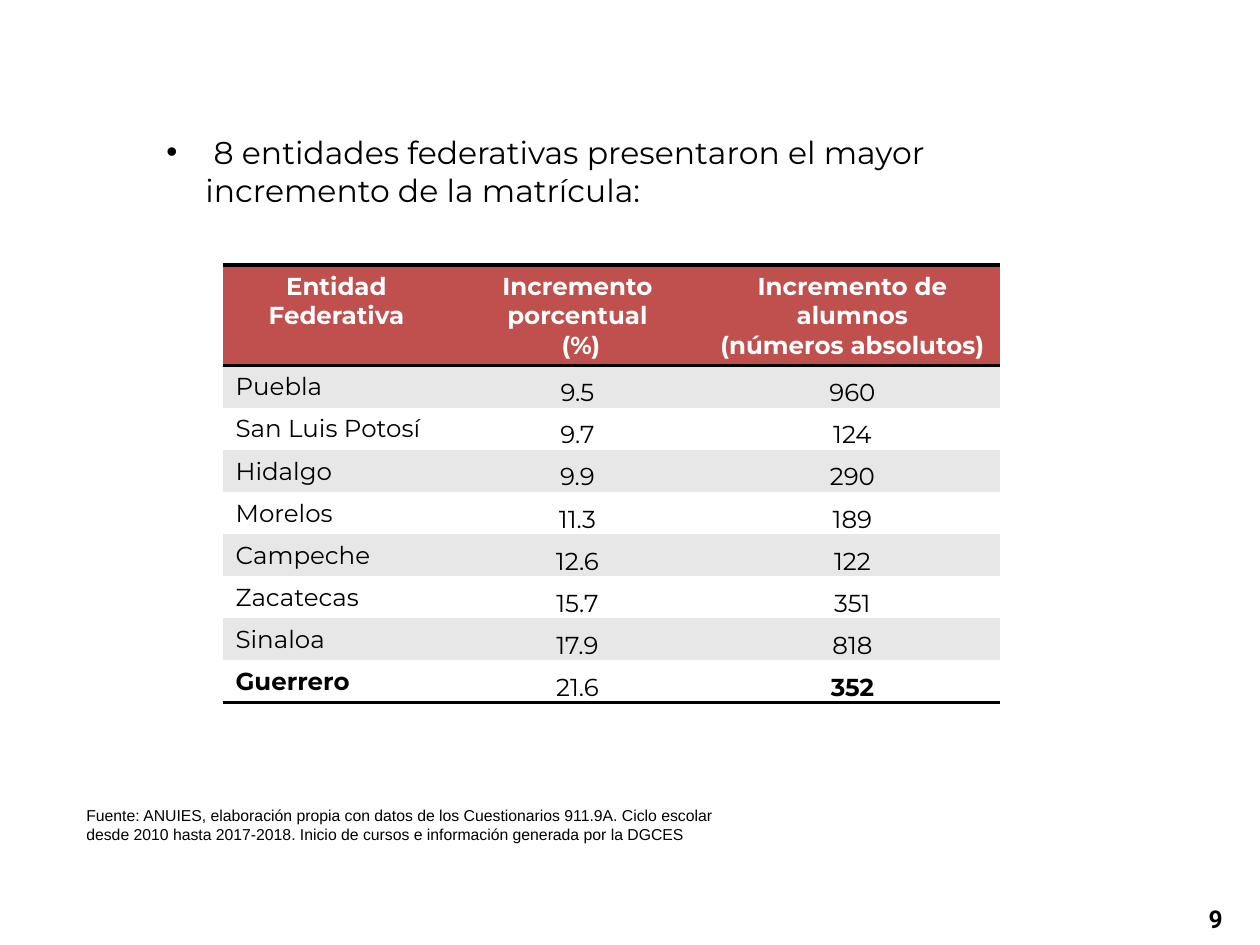
from typing import NamedTuple

from lxml.etree import SubElement
from pptx import Presentation
from pptx.dml.color import RGBColor
from pptx.enum.text import MSO_ANCHOR, PP_ALIGN
from pptx.oxml import parse_xml
from pptx.oxml.ns import nsdecls, qn
from pptx.util import Emu, Pt

PX_PER_INCH = 126
BLACK, WHITE, RED, GRAY = "000000", "FFFFFF", "C0504D", "E7E7E7"
BODY_FONT = "Montserrat"
NO_STYLE_NO_GRID = "{2D5ABB26-0587-4C30-8999-92F81FD0307C}"


class Box(NamedTuple):
    left: int
    top: int
    width: int
    height: int


class StateRow(NamedTuple):
    state: str
    percent: str
    students: str
    emphasized: bool = False


HEADERS = (
    "Entidad Federativa",
    "Incremento porcentual\n (%)",
    "Incremento de alumnos\n(números absolutos)",
)
STATES = (
    StateRow("Puebla", "9.5", "960"),
    StateRow("San Luis Potosí", "9.7", "124"),
    StateRow("Hidalgo", "9.9", "290"),
    StateRow("Morelos", "11.3", "189"),
    StateRow("Campeche", "12.6", "122"),
    StateRow("Zacatecas", "15.7", "351"),
    StateRow("Sinaloa", "17.9", "818"),
    StateRow("Guerrero", "21.6", "352", emphasized=True),
)
COLUMN_WIDTHS = (227, 255, 295)
HEADER_HEIGHT, ROW_HEIGHT = 95, 39


def px(length: int) -> Emu:
    return Emu(round(length * 914400 / PX_PER_INCH))


def color(value: str) -> RGBColor:
    return RGBColor.from_string(value)


def write_text(frame, text: str, *, size: int, font: str = BODY_FONT,
               fill: str = BLACK, bold: bool = False,
               align: PP_ALIGN = PP_ALIGN.LEFT, bullet_indent: int = 0) -> None:
    """Fill a text frame, one paragraph for each line of text."""
    frame.word_wrap = True
    for index, line in enumerate(text.split("\n")):
        paragraph = frame.paragraphs[0] if index == 0 else frame.add_paragraph()
        paragraph.alignment = align
        if bullet_indent:
            properties = paragraph._p.get_or_add_pPr()
            properties.set("marL", str(px(bullet_indent)))
            properties.set("indent", str(-px(bullet_indent)))
            SubElement(properties, qn("a:buFont")).set("typeface", "Arial")
            SubElement(properties, qn("a:buChar")).set("char", "•")
        run = paragraph.add_run()
        run.text = line
        run.font.name = font
        run.font.size = Pt(size)
        run.font.bold = bold
        run.font.color.rgb = color(fill)


def add_text(slide, box: Box, text: str, **text_format) -> None:
    shape = slide.shapes.add_textbox(*map(px, box))
    write_text(shape.text_frame, text, **text_format)


def add_rules(cell, *sides: str) -> None:
    """Draw black 2 pt borders; sides are "T" and "B", in that order."""
    for index, side in enumerate(sides):
        border = parse_xml(
            f'<a:ln{side} {nsdecls("a")} w="{Pt(2)}"><a:solidFill>'
            f'<a:srgbClr val="{BLACK}"/></a:solidFill></a:ln{side}>')
        cell._tc.get_or_add_tcPr().insert(index, border)


def fill_cell(cell, fill: str) -> None:
    cell.fill.solid()
    cell.fill.fore_color.rgb = color(fill)


def fill_header(table) -> None:
    for cell, label in zip(table.rows[0].cells, HEADERS):
        write_text(cell.text_frame, label, size=14, fill=WHITE, bold=True,
                   align=PP_ALIGN.CENTER)
        fill_cell(cell, RED)
        add_rules(cell, "T", "B")


def fill_state(cells, row: StateRow, fill: str, is_last: bool) -> None:
    state, *numbers = cells
    write_text(state.text_frame, row.state, size=14, bold=row.emphasized)
    for cell, value, bold in zip(numbers, (row.percent, row.students),
                                 (False, row.emphasized)):
        write_text(cell.text_frame, value, size=14, bold=bold,
                   align=PP_ALIGN.CENTER)
        cell.vertical_anchor = MSO_ANCHOR.BOTTOM
        cell.margin_left = cell.margin_right = cell.margin_top = px(1)
        cell.margin_bottom = 0
    for cell in cells:
        fill_cell(cell, fill)
        if is_last:
            add_rules(cell, "B")


def add_state_table(slide, left: int, top: int) -> None:
    height = HEADER_HEIGHT + ROW_HEIGHT * len(STATES)
    box = Box(left, top, sum(COLUMN_WIDTHS), height)
    table = slide.shapes.add_table(
        len(STATES) + 1, len(HEADERS), *map(px, box)).table
    table._tbl.tblPr.find(qn("a:tableStyleId")).text = NO_STYLE_NO_GRID
    for column, width in zip(table.columns, COLUMN_WIDTHS):
        column.width = px(width)
    for index, row in enumerate(table.rows):
        row.height = px(ROW_HEIGHT if index else HEADER_HEIGHT)
    fill_header(table)
    for index, state in enumerate(STATES):
        fill_state(list(table.rows[index + 1].cells), state,
                   WHITE if index % 2 else GRAY, index == len(STATES) - 1)


def main() -> None:
    presentation = Presentation()
    presentation.slide_width, presentation.slide_height = px(1260), px(945)
    slide = presentation.slides.add_slide(presentation.slide_layouts[6])
    add_text(slide, Box(154, 127, 951, 89),
             " 8 entidades federativas presentaron el mayor incremento de la matrícula:",
             size=18, bullet_indent=39)
    add_state_table(slide, 223, 265)
    add_text(slide, Box(74, 800, 694, 50),
             "Fuente: ANUIES, elaboración propia con datos de los Cuestionarios 911.9A. "
             "Ciclo escolar desde 2010 hasta 2017-2018. Inicio de cursos e información "
             "generada por la DGCES",
             size=9, font="Arial")
    add_text(slide, Box(941, 898, 294, 50), "9", size=14, font="Roboto",
             bold=True, align=PP_ALIGN.RIGHT)
    presentation.save("out.pptx")


if __name__ == "__main__":
    main()
